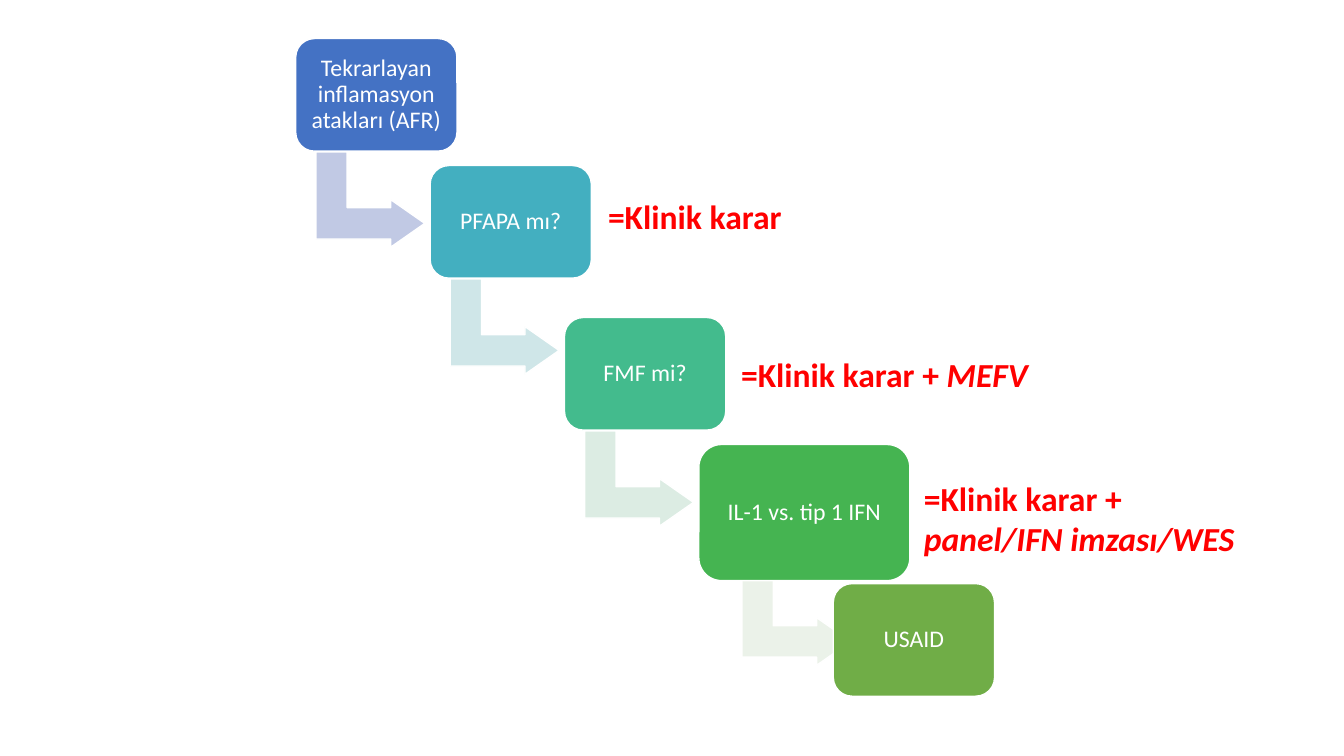
from pptx import Presentation
from pptx.dml.color import RGBColor as Rgb
from pptx.enum.shapes import MSO_SHAPE as Kind
from pptx.enum.text import MSO_ANCHOR as Anchor, MSO_AUTO_SIZE as Fit, PP_ALIGN as Align
from pptx.util import Inches, Pt

HUES = {
    "white": "FFFFFF", "red": "FF0000",
    "blue": "4472C4", "teal": "43AFC0", "mint": "43BB8D", "green": "45B451", "olive": "70AD47",
    "pale blue": "C1C9E4", "pale teal": "CFE6E8", "pale mint": "DCECE3", "pale green": "EBF2E9",
}


class Deck:
    """Draws styled steps, bends and notes on a grid of ten columns by ten rows."""

    def __init__(self):
        self.prs = Presentation()
        self.prs.slide_width, self.prs.slide_height = Inches(13.33), Inches(7.5)
        self.slide = self.prs.slides.add_slide(self.prs.slide_layouts[6])
        self.font = "Calibri"

    def grid(self, col, row, wide, high):
        x, y = self.prs.slide_width / 10, self.prs.slide_height / 10
        return [round(v) for v in (col * x, row * y, wide * x, high * y)]

    def shape(self, kind, hue, *spot):
        item = self.slide.shapes.add_shape(kind, *self.grid(*spot))
        item.shadow.inherit = False
        item.fill.solid()
        item.fill.fore_color.rgb = Rgb.from_string(HUES[hue])
        item.line.color.rgb = Rgb.from_string(HUES["white"])
        item.line.width = Pt(1)
        return item

    def style(self, para, size, hue, bold=False):
        font = para.font
        font.name, font.size, font.bold = self.font, Pt(size), bold
        font.color.rgb = Rgb.from_string(HUES[hue])

    def step(self, text, hue, *spot):
        box = self.shape(Kind.ROUNDED_RECTANGLE, hue, *spot)
        frame = box.text_frame
        frame.word_wrap = True
        frame.vertical_anchor = Anchor.MIDDLE
        frame.margin_left = frame.margin_right = Inches(0.07)
        frame.margin_top = frame.margin_bottom = Inches(0.07)
        para = frame.paragraphs[0]
        para.text, para.alignment, para.line_spacing = text, Align.CENTER, 0.9
        self.style(para, 17, "white")

    def bend(self, hue, col, row):
        arrow = self.shape(Kind.BENT_UP_ARROW, hue, col, row, 0.71, 1.44)
        arrow.rotation = 90
        for i, share in enumerate((0.328, 0.25, 0.358)):
            arrow.adjustments[i] = share

    def note(self, lines, *spot):
        frame = self.slide.shapes.add_textbox(*self.grid(*spot)).text_frame
        frame.word_wrap = False
        frame.auto_size = Fit.SHAPE_TO_FIT_TEXT
        for i, runs in enumerate(lines):
            para = frame.add_paragraph() if i else frame.paragraphs[0]
            self.style(para, 24, "red", True)
            for text, slant in runs:
                run = para.add_run()
                run.text = text
                if slant:
                    run.font.italic = True


def main():
    deck = Deck()
    small, large = (1.2, 1.49), (1.57, 1.8)
    near, far = (0.2, 1.41), (0.37, 1.57)
    steps = [
        ("Tekrarlayan inflamasyon atakları (AFR)", "blue", 0.51, small, near),
        ("PFAPA mı?", "teal", 2.19, small, near),
        ("FMF mi?", "mint", 4.2, small, near),
        ("IL-1 vs. tip 1 IFN", "green", 5.88, large, far),
        ("USAID", "olive", 7.72, small, None),
    ]
    for i, (text, hue, row, size, shift) in enumerate(steps):
        col = 2.2 + i
        if shift:
            deck.bend("pale " + hue, col + shift[0], row + shift[1])
        deck.step(text, hue, col, row, *size)

    deck.note([[("=Klinik karar", False)]], 4.45, 2.53, 1.46, 0.67)
    deck.note([[("=Klinik karar + ", False), ("MEFV", True)]], 5.44, 4.61, 2.3, 0.67)
    deck.note([[("=Klinik karar +", False)], [("panel/IFN imzası/WES", True)]], 6.8, 6.25, 2.48, 1.21)
    deck.prs.save("out.pptx")


if __name__ == "__main__":
    main()
